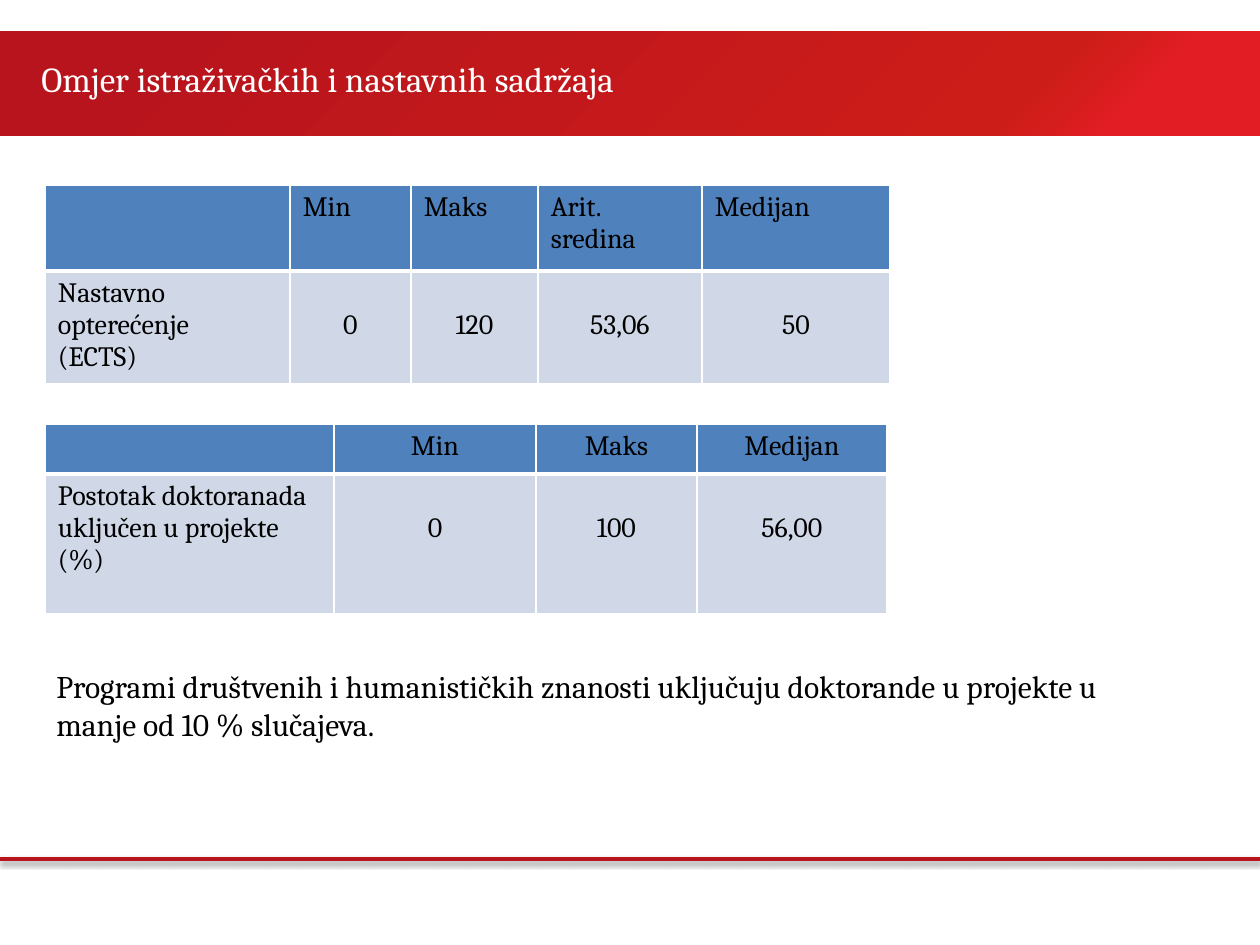
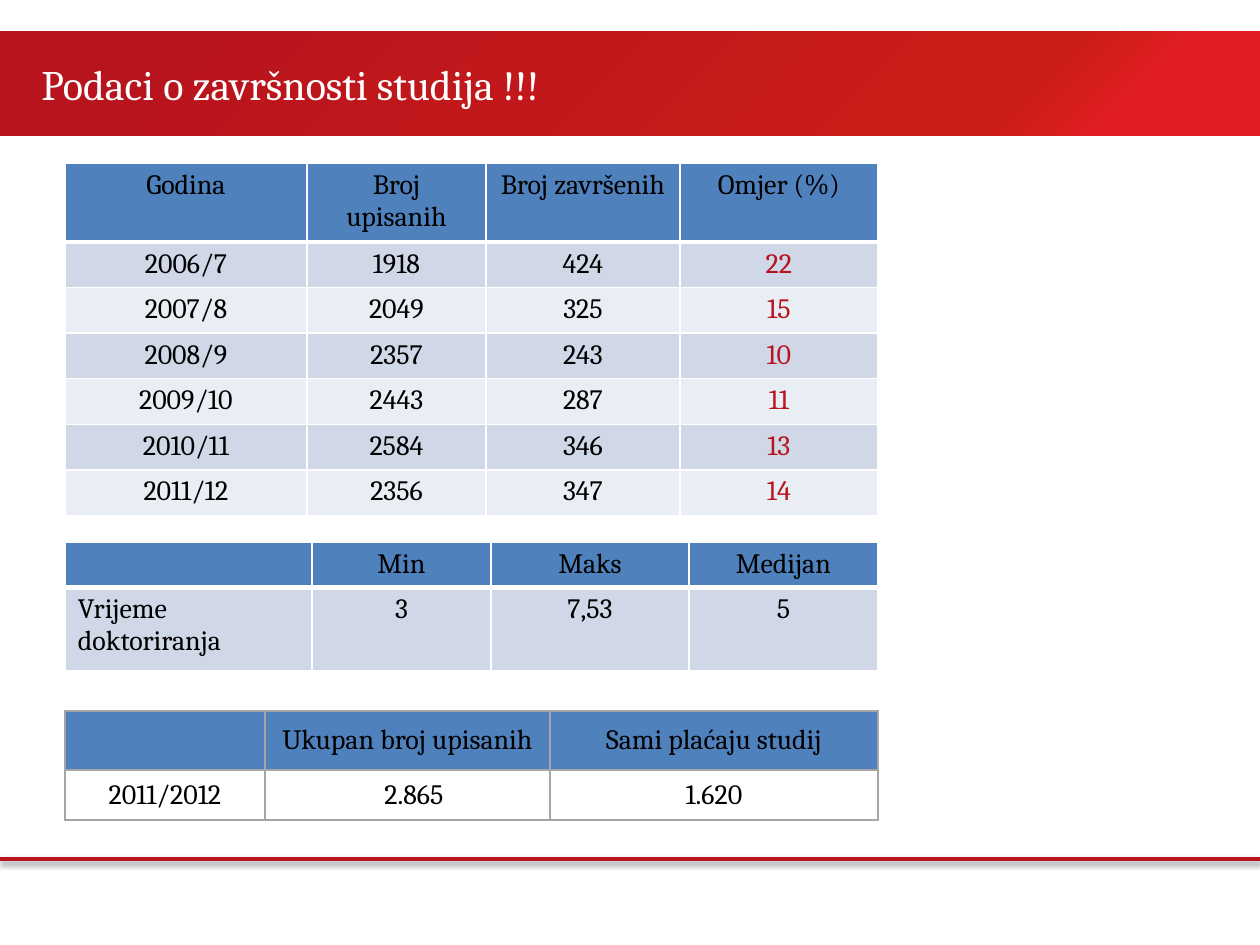
import dataclasses

import lxml.etree
import pptx
import pptx.dml.color
import pptx.enum.shapes
import pptx.enum.text
import pptx.oxml
import pptx.oxml.ns
import pptx.util

RGBColor = pptx.dml.color.RGBColor
Align = pptx.enum.text.PP_ALIGN
Anchor = pptx.enum.text.MSO_ANCHOR

EMU_PER_PX = 914400 / 126
SLIDE_WIDTH, SLIDE_HEIGHT = 1260, 945
FONT = "Cambria"
TABLE_TEXT_SIZE = 16

WHITE = RGBColor(0xFF, 0xFF, 0xFF)
BLACK = RGBColor(0x00, 0x00, 0x00)
GRAY = RGBColor(0xA6, 0xA6, 0xA6)
BRIGHT_RED = RGBColor(0xE2, 0x1D, 0x24)
MEDIUM_RED = RGBColor(0xCD, 0x1D, 0x19)
DARK_RED = RGBColor(0xB8, 0x14, 0x1D)
HEADER_BLUE = RGBColor(0x4F, 0x81, 0xBD)
ROW_BLUE = RGBColor(0xD0, 0xD8, 0xE8)
PALE_BLUE = RGBColor(0xE9, 0xED, 0xF4)

BAND_STOPS = ((11, BRIGHT_RED), (20, MEDIUM_RED), (89, DARK_RED))


@dataclasses.dataclass
class TableStyle:
    header_align: Align = Align.CENTER
    label_align: Align = Align.LEFT
    border: RGBColor = WHITE
    header_rule: int = 3
    body_fills: tuple = (ROW_BLUE, PALE_BLUE)
    last_column_color: RGBColor = BLACK
    value_margin_top: int = 6
    margins: tuple = (13, 6)
    anchor: Anchor = Anchor.TOP


def px(length):
    return pptx.util.Emu(round(length * EMU_PER_PX))


def add_xml(parent, xml):
    namespaces = pptx.oxml.ns.nsdecls("a")
    tag, rest = xml.split(" ", 1)
    element = pptx.oxml.parse_xml(f"{tag} {namespaces} {rest}")
    parent.append(element)
    return element


def write_paragraph(paragraph, text, size, color, align=Align.LEFT):
    paragraph.alignment = align
    run = paragraph.add_run()
    run.text = text
    run.font.name = FONT
    run.font.size = pptx.util.Pt(size)
    run.font.color.rgb = color


def add_text(slide, box, text, size, color, anchor=Anchor.TOP):
    shape = slide.shapes.add_textbox(*map(px, box))
    frame = shape.text_frame
    frame.word_wrap = True
    frame.vertical_anchor = anchor
    write_paragraph(frame.paragraphs[0], text, size, color)


def add_band(slide):
    band = slide.shapes.add_shape(
        pptx.enum.shapes.MSO_SHAPE.RECTANGLE, px(0), px(31), px(SLIDE_WIDTH), px(105)
    )
    band.shadow.inherit = False
    band.line.fill.background()
    band.fill.gradient()
    band.fill.gradient_angle = 135
    stops = band.fill._fill._gradFill.gsLst
    for stop in list(stops):
        stops.remove(stop)
    for position, color in BAND_STOPS:
        add_xml(stops, f'<a:gs pos="{position * 1000}"><a:srgbClr val="{color}"/></a:gs>')


def add_footer_line(slide):
    line = slide.shapes.add_connector(
        pptx.enum.shapes.MSO_CONNECTOR.STRAIGHT, px(0), px(859), px(SLIDE_WIDTH), px(859)
    )
    line.line.color.rgb = DARK_RED
    line.line.width = pptx.util.Pt(2)
    effects = add_xml(line._element.spPr, "<a:effectLst />")
    add_xml(
        effects,
        '<a:outerShdw blurRad="40000" dist="20000" dir="5400000" rotWithShape="0">'
        '<a:srgbClr val="000000"><a:alpha val="38000"/></a:srgbClr></a:outerShdw>',
    )


def add_titled_slide(presentation, title, title_top, title_size):
    slide = presentation.slides.add_slide(presentation.slide_layouts[6])
    add_band(slide)
    add_footer_line(slide)
    add_text(slide, (29, title_top, 1073, 78), title, title_size, WHITE, Anchor.MIDDLE)
    return slide


def set_borders(cell, color, top, bottom):
    properties = cell._tc.get_or_add_tcPr()
    for side, width in (("L", 1), ("R", 1), ("T", top), ("B", bottom)):
        add_xml(
            properties,
            f'<a:ln{side} w="{pptx.util.Pt(width)}"><a:solidFill>'
            f'<a:srgbClr val="{color}"/></a:solidFill></a:ln{side}>',
        )


def format_cell(cell, row, style):
    top = style.header_rule if row == 1 else 1
    bottom = style.header_rule if row == 0 else 1
    set_borders(cell, style.border, top, bottom)
    if row == 0:
        fill = HEADER_BLUE
    else:
        fill = style.body_fills[(row - 1) % len(style.body_fills)]
    cell.fill.solid()
    cell.fill.fore_color.rgb = fill
    cell.vertical_anchor = style.anchor
    side, edge = style.margins
    cell.margin_left = cell.margin_right = px(side)
    cell.margin_top = cell.margin_bottom = px(edge)


def write_cell(cell, text, row, column, last_column, style):
    if not text:
        cell.margin_top = cell.margin_bottom = 0
        return
    align, color = Align.CENTER, BLACK
    if row == 0:
        align = style.header_align
    elif column == 0:
        align = style.label_align
    else:
        cell.margin_top = px(style.value_margin_top)
        if column == last_column:
            color = style.last_column_color
    frame = cell.text_frame
    for index, line in enumerate(text.split("\n")):
        paragraph = frame.add_paragraph() if index else frame.paragraphs[0]
        write_paragraph(paragraph, line, TABLE_TEXT_SIZE, color, align)


def add_data_table(slide, corner, widths, heights, rows, style):
    frame = slide.shapes.add_table(
        len(rows), len(widths), *map(px, (*corner, sum(widths), sum(heights)))
    )
    table = frame.table
    table.first_row = table.horz_banding = False
    for column, width in zip(table.columns, widths):
        column.width = px(width)
    for table_row, height in zip(table.rows, heights):
        table_row.height = px(height)
    for row, texts in enumerate(rows):
        for column, text in enumerate(texts):
            cell = table.cell(row, column)
            format_cell(cell, row, style)
            write_cell(cell, text, row, column, len(widths) - 1, style)
    return table


def build_teaching_slide(presentation):
    slide = add_titled_slide(
        presentation, "Omjer istraživačkih i nastavnih sadržaja", 40, 20
    )
    add_data_table(
        slide, (45, 185), (245, 121, 127, 164, 188), (86, 113),
        [
            ("", "Min", "Maks", "Arit. sredina", "Medijan"),
            ("Nastavno opterećenje\n(ECTS)", "0", "120", "53,06", "50"),
        ],
        TableStyle(header_align=Align.LEFT, value_margin_top=38),
    )
    add_data_table(
        slide, (45, 424), (289, 202, 161, 190), (50, 140),
        [
            ("", "Min", "Maks", "Medijan"),
            ("Postotak doktoranada\nuključen u projekte (%)", "0", "100", "56,00"),
        ],
        TableStyle(value_margin_top=38),
    )
    add_text(
        slide, (44, 661, 1121, 92),
        "Programi društvenih i humanističkih znanosti uključuju doktorande "
        "u projekte u manje od 10 % slučajeva.",
        18, BLACK,
    )


def build_completion_slide(presentation):
    slide = add_titled_slide(presentation, "Podaci o završnosti studija !!!", 45, 24)
    add_data_table(
        slide, (65, 163), (242, 179, 194, 198), (76, *[45] * 6),
        [
            ("Godina", "Broj upisanih", "Broj završenih", "Omjer (%)"),
            ("2006/7", "1918", "424", "22"),
            ("2007/8", "2049", "325", "15"),
            ("2008/9", "2357", "243", "10"),
            ("2009/10", "2443", "287", "11"),
            ("2010/11", "2584", "346", "13"),
            ("2011/12", "2356", "347", "14"),
        ],
        TableStyle(label_align=Align.CENTER, last_column_color=DARK_RED),
    )
    add_data_table(
        slide, (65, 542), (247, 179, 198, 189), (45, 83),
        [
            ("", "Min", "Maks", "Medijan"),
            ("Vrijeme doktoriranja", "3", "7,53", "5"),
        ],
        TableStyle(),
    )
    payment_table = add_data_table(
        slide, (65, 711), (200, 285, 328), (59, 50),
        [
            ("", "Ukupan broj upisanih", "Sami plaćaju studij"),
            ("2011/2012", "2.865", "1.620"),
        ],
        TableStyle(
            label_align=Align.CENTER, border=GRAY, header_rule=1, body_fills=(WHITE,),
            value_margin_top=5, margins=(5, 5), anchor=Anchor.MIDDLE,
        ),
    )
    payment_table.cell(1, 1).margin_left = px(18)


def main():
    presentation = pptx.Presentation()
    presentation.slide_width = px(SLIDE_WIDTH)
    presentation.slide_height = px(SLIDE_HEIGHT)
    build_teaching_slide(presentation)
    build_completion_slide(presentation)
    presentation.save("out.pptx")


if __name__ == "__main__":
    main()
